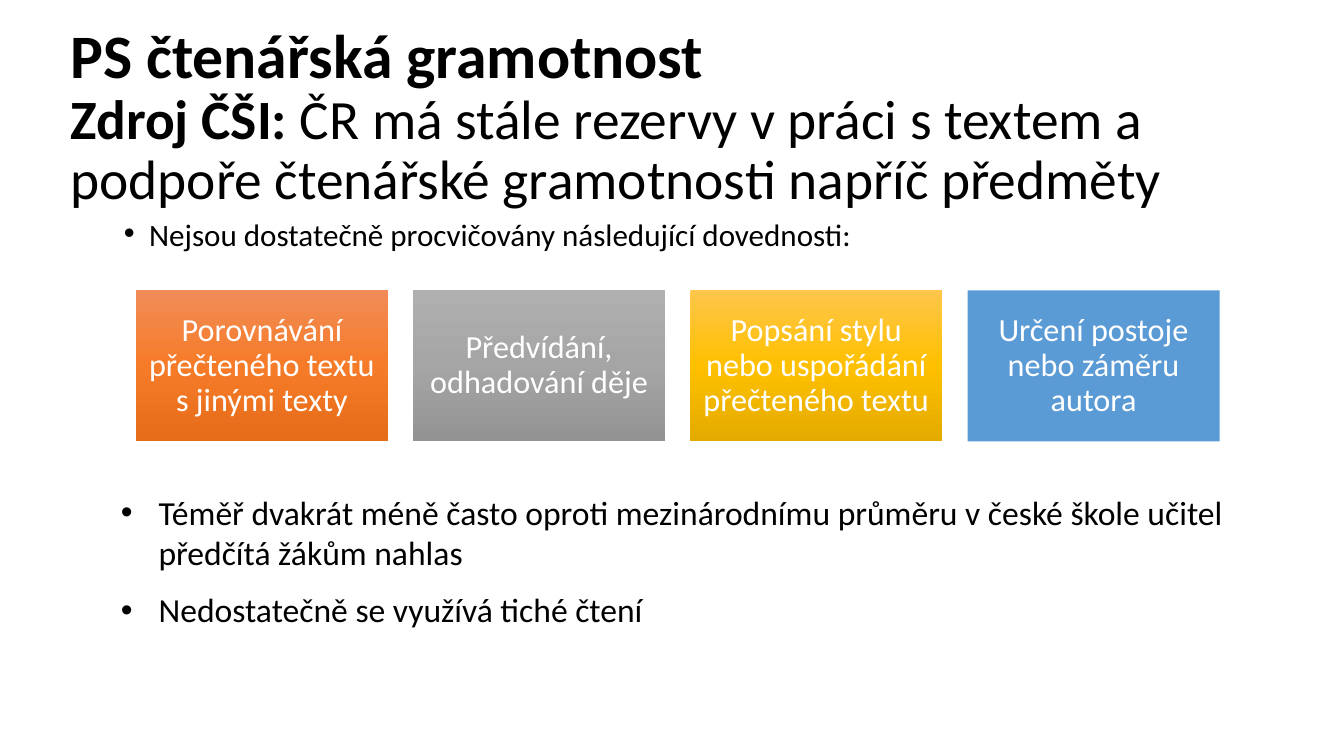
"""Build a slide about gaps in teaching reading literacy."""
from copy import deepcopy
from dataclasses import dataclass

from lxml import etree
from pptx import Presentation
from pptx.dml.color import RGBColor
from pptx.enum.shapes import MSO_SHAPE
from pptx.enum.text import MSO_ANCHOR, MSO_AUTO_SIZE, PP_ALIGN
from pptx.oxml.ns import qn
from pptx.slide import Slide
from pptx.util import Pt

RECTANGLE = MSO_SHAPE.RECTANGLE
MIDDLE = MSO_ANCHOR.MIDDLE
GROW = MSO_AUTO_SIZE.SHAPE_TO_FIT_TEXT
CENTER = PP_ALIGN.CENTER


@dataclass(frozen=True)
class Theme:
    font: str = "Calibri"
    ink: str = "000000"
    card_ink: str = "FFFFFF"
    orange: tuple[str, ...] = ("F18C57", "F67B28", "E56C19")
    gray: tuple[str, ...] = ("AFAFAF", "A5A5A5", "939393")
    gold: tuple[str, ...] = ("FFC64B", "FFC000", "E3AB00")
    blue: tuple[str, ...] = ("5B9BD5",)
    headline: float = 44.1
    subtitle: float = 39.6
    intro: float = 22.2
    card: float = 23
    finding: float = 24


@dataclass(frozen=True)
class Box:
    left: float
    top: float
    width: float
    height: float

    def lengths(self) -> tuple[Pt, ...]:
        return Pt(self.left), Pt(self.top), Pt(self.width), Pt(self.height)


@dataclass(frozen=True)
class Skill:
    label: str
    colors: tuple[str, ...]


@dataclass(frozen=True)
class BulletList:
    box: Box
    items: tuple[str, ...]
    size: float
    indent: float
    line_spacing: float
    space_after: float


THEME = Theme()
TITLE_BOX = Box(43.2, 24.5, 905, 119.5)
FIRST_CARD = Box(97.2, 207.4, 180, 108)
CARD_GAP = 18
CARD_INSET = 7

SKILLS = (
    Skill("Porovnávání přečteného textu s jinými texty", THEME.orange),
    Skill("Předvídání, odhadování děje", THEME.gray),
    Skill("Popsání stylu nebo uspořádání přečteného textu", THEME.gold),
    Skill("Určení postoje nebo záměru autora", THEME.blue),
)
INTRO = BulletList(
    Box(81.4, 157.7, 853.2, 26.6),
    ("Nejsou dostatečně procvičovány následující dovednosti:",),
    THEME.intro, 18, 0.7, 0,
)
FINDINGS = BulletList(
    Box(79.2, 347.8, 848.9, 106.6),
    (
        "Téměř dvakrát méně často oproti mezinárodnímu průměru "
        "v české škole učitel předčítá žákům nahlas",
        "Nedostatečně se využívá tiché čtení",
    ),
    THEME.finding, 27, 1, 12,
)


def style_run(run, size: float, color: str, bold: bool = False) -> None:
    run.font.name = THEME.font
    run.font.size = Pt(size)
    run.font.bold = bold
    run.font.color.rgb = RGBColor.from_string(color)


def add_title(slide: Slide) -> None:
    frame = slide.shapes.add_textbox(*TITLE_BOX.lengths()).text_frame
    frame.word_wrap = True
    frame.vertical_anchor = MIDDLE
    title = frame.paragraphs[0]
    title.text = "PS čtenářská gramotnost\vZdroj ČŠI: "
    title.line_spacing = 0.9
    title.add_run().text = (
        "ČR má stále rezervy v práci s textem a "
        "podpoře čtenářské gramotnosti napříč předměty"
    )
    headline, source, message = title.runs
    style_run(headline, THEME.headline, THEME.ink, bold=True)
    style_run(source, THEME.subtitle, THEME.ink, bold=True)
    style_run(message, THEME.subtitle, THEME.ink)


def add_bullets(slide: Slide, bullets: BulletList, grow: bool = False) -> None:
    frame = slide.shapes.add_textbox(*bullets.box.lengths()).text_frame
    frame.word_wrap = True
    if grow:
        frame.auto_size = GROW
    frame.text = "\n".join(bullets.items)
    for item in frame.paragraphs:
        properties = item._p.get_or_add_pPr()
        properties.set("marL", str(Pt(bullets.indent)))
        properties.set("indent", str(-Pt(bullets.indent)))
        etree.SubElement(properties, qn("a:buFont")).set("typeface", "Arial")
        etree.SubElement(properties, qn("a:buChar")).set("char", "•")
        item.line_spacing = bullets.line_spacing
        item.space_after = Pt(bullets.space_after)
        style_run(item.runs[0], bullets.size, THEME.ink)


def fill_card(card, colors: tuple[str, ...]) -> None:
    if len(colors) == 1:
        card.fill.solid()
        card.fill.fore_color.rgb = RGBColor.from_string(colors[0])
        return
    card.fill.gradient()
    card.fill.gradient_angle = 270
    stop_list = card._element.spPr.find(f".//{qn('a:gsLst')}")
    for _ in colors[2:]:
        stop_list.append(deepcopy(stop_list[0]))
    for index, (stop, color) in enumerate(zip(card.fill.gradient_stops, colors)):
        stop.position = index / (len(colors) - 1)
        stop.color.rgb = RGBColor.from_string(color)


def add_card(slide: Slide, skill: Skill, box: Box) -> None:
    card = slide.shapes.add_shape(RECTANGLE, *box.lengths())
    card.shadow.inherit = False
    card.line.fill.background()
    fill_card(card, skill.colors)
    frame = card.text_frame
    frame.word_wrap = True
    frame.vertical_anchor = MIDDLE
    frame.margin_left = frame.margin_right = Pt(CARD_INSET)
    frame.margin_top = frame.margin_bottom = Pt(CARD_INSET)
    frame.text = skill.label
    label = frame.paragraphs[0]
    label.alignment = CENTER
    label.line_spacing = 0.9
    style_run(label.runs[0], THEME.card, THEME.card_ink)


def main() -> None:
    presentation = Presentation()
    presentation.slide_width = Pt(960)
    presentation.slide_height = Pt(540)
    slide = presentation.slides.add_slide(presentation.slide_layouts[6])
    add_title(slide)
    add_bullets(slide, INTRO)
    for column, skill in enumerate(SKILLS):
        left = FIRST_CARD.left + column * (FIRST_CARD.width + CARD_GAP)
        add_card(slide, skill, Box(left, FIRST_CARD.top, FIRST_CARD.width, FIRST_CARD.height))
    add_bullets(slide, FINDINGS, grow=True)
    presentation.save("out.pptx")


if __name__ == "__main__":
    main()
